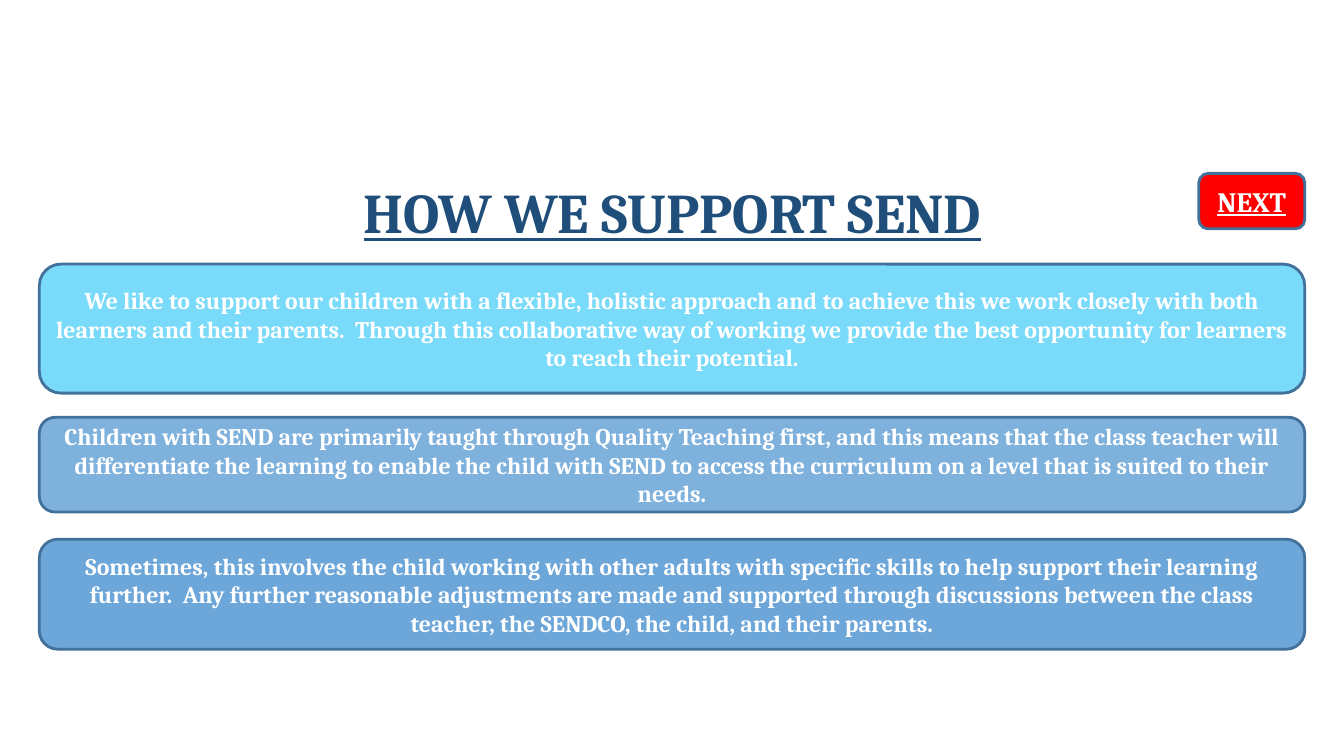
import pptx
import pptx.dml.color
import pptx.enum.shapes
import pptx.enum.text
import pptx.oxml
import pptx.oxml.ns
import pptx.util

PX = 9144  # EMU per px, 100 px to the inch
FONT = "Cambria"
WHITE = "FFFFFF"
BORDER = "42719B"
PANEL_LEFT, PANEL_WIDTH = 39, 1255

# Top, height, fill, opacity in percent, wording
PANELS = [
    (262, 128, "6BD7F9", 90,
     "We like to support our children with a flexible, holistic approach and "
     "to achieve this we work closely with both learners and their parents.  "
     "Through this collaborative way of working we provide the best "
     "opportunity for learners to reach their potential."),
    (414, 94, "6DA6D9", 87,
     "Children with SEND are primarily taught through Quality Teaching first, "
     "and this means that the class teacher will differentiate the learning "
     "to enable the child with SEND to access the curriculum on a level that "
     "is suited to their needs."),
    (535, 109, "6DA6D9", 100,
     "Sometimes, this involves the child working with other adults with "
     "specific skills to help support their learning further.  Any further "
     "reasonable adjustments are made and supported through discussions "
     "between the class teacher, the SENDCO, the child, and their parents."),
]


def px(*lengths):
    return [pptx.util.Emu(n * PX) for n in lengths]


def rgb(color):
    return pptx.dml.color.RGBColor.from_string(color)


def set_text(sp, text, size, color, underline=False):
    tf = sp.text_frame
    tf.word_wrap = True
    tf.vertical_anchor = pptx.enum.text.MSO_ANCHOR.MIDDLE
    p = tf.paragraphs[0]
    p.text = text
    p.alignment = pptx.enum.text.PP_ALIGN.CENTER
    p.font.name = FONT
    p.font.size = pptx.util.Pt(size)
    p.font.bold = True
    p.font.underline = underline
    p.font.color.rgb = rgb(color)
    return p


def set_opacity(sp, percent):
    color = sp.fill._xPr.find(".//" + pptx.oxml.ns.qn("a:srgbClr"))
    alpha = pptx.oxml.parse_xml(
        f'<a:alpha {pptx.oxml.ns.nsdecls("a")} val="{percent * 1000}"/>')
    color.append(alpha)


def add_title(s, box, text):
    sp = s.shapes.add_textbox(*px(*box))
    p = set_text(sp, text, 40, "1E4E79", underline=True)
    p.line_spacing = 0.9


def add_rounded_box(s, box, fill, text, size, opacity=100, underline=False):
    kind = pptx.enum.shapes.MSO_SHAPE.ROUNDED_RECTANGLE
    sp = s.shapes.add_shape(kind, *px(*box))
    sp.shadow.inherit = False
    sp.fill.solid()
    sp.fill.fore_color.rgb = rgb(fill)
    if opacity < 100:
        set_opacity(sp, opacity)
    sp.line.color.rgb = rgb(BORDER)
    sp.line.width = pptx.util.Pt(2)
    set_text(sp, text, size, WHITE, underline)


def main():
    prs = pptx.Presentation()
    prs.slide_width, prs.slide_height = px(1333, 750)
    s = prs.slides.add_slide(prs.slide_layouts[6])

    # Heading
    add_title(s, (160, 166, 1014, 96), "HOW WE SUPPORT SEND")

    # Statement panels
    for top, height, fill, opacity, text in PANELS:
        box = (PANEL_LEFT, top, PANEL_WIDTH, height)
        add_rounded_box(s, box, fill, text, 17, opacity)

    # Navigation button
    add_rounded_box(s, (1189, 172, 105, 55), "FF0000", "NEXT", 20,
                    underline=True)

    prs.save("out.pptx")


if __name__ == "__main__":
    main()
